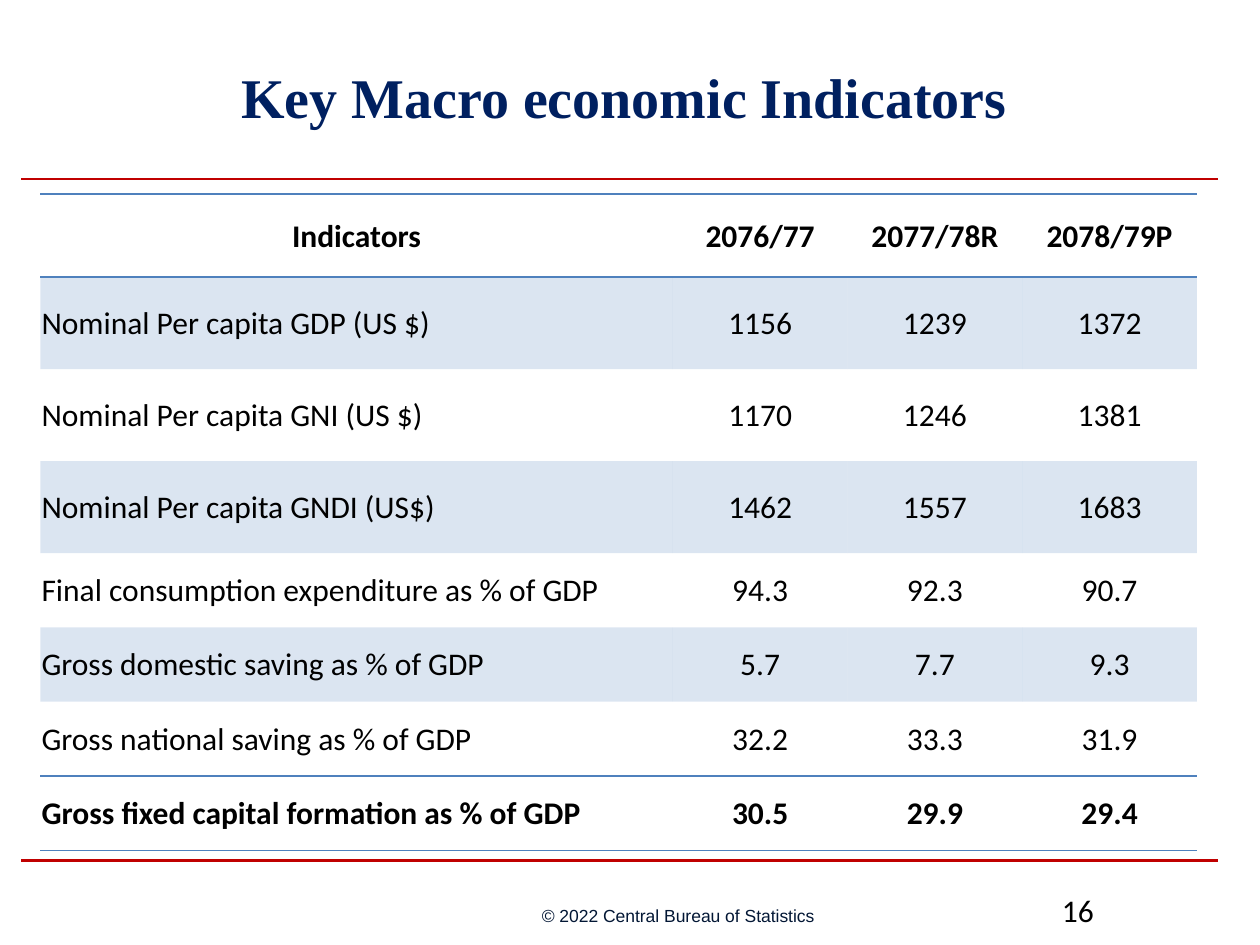
from dataclasses import dataclass
from typing import NamedTuple

from lxml.etree import SubElement
from pptx import Presentation
from pptx.dml.color import RGBColor
from pptx.enum.shapes import MSO_CONNECTOR as Connector
from pptx.enum.text import MSO_ANCHOR as Anchor, PP_ALIGN as Align
from pptx.oxml.ns import qn
from pptx.util import Inches, Pt


@dataclass(frozen=True)
class Theme:
    title: str = "002060"
    rule: str = "C00000"
    accent: str = "4F81BD"
    body: str = "000000"
    copyright: str = "031735"
    band_opacity: int = 20
    title_size: int = 32
    body_size: int = 18
    copyright_size: int = 10
    title_font: str = "Times New Roman"
    body_font: str = "Calibri"
    copyright_font: str = "Arial"


class Indicator(NamedTuple):
    label: str
    values: tuple[str, str, str]
    height: float
    bold: bool = False
    ruled: bool = False
    banded: bool = False


THEME = Theme()
NO_STYLE = "{2D5ABB26-0587-4C30-8999-92F81FD0307C}"
TABLE_LEFT, TABLE_TOP, TABLE_WIDTH = 0.32, 1.54, 9.18
LABEL_WIDTH = 5.02
TALL, SHORT = 0.73, 0.59

INDICATORS = [
    Indicator("Indicators", ("2076/77", "2077/78R", "2078/79P"), 0.66, bold=True, ruled=True),
    Indicator("Nominal Per capita GDP (US $)", ("1156", "1239", "1372"), TALL, banded=True),
    Indicator("Nominal Per capita GNI (US $)", ("1170", "1246", "1381"), TALL),
    Indicator("Nominal Per capita GNDI (US$)", ("1462", "1557", "1683"), TALL, banded=True),
    Indicator("Final consumption expenditure as % of GDP", ("94.3", "92.3", "90.7"), SHORT),
    Indicator("Gross domestic saving as % of GDP", ("5.7", "7.7", "9.3"), SHORT, banded=True),
    Indicator("Gross national saving as % of GDP", ("32.2", "33.3", "31.9"), SHORT),
    Indicator("Gross fixed capital formation as % of GDP", ("30.5", "29.9", "29.4"), SHORT,
              bold=True, ruled=True),
]


def write(frame, text: str, *, size: int = THEME.body_size, font: str = THEME.body_font,
          color: str = THEME.body, bold: bool = False, align=Align.LEFT) -> None:
    paragraph = frame.paragraphs[0]
    paragraph.alignment = align
    run = paragraph.add_run()
    run.text = text
    run.font.size = Pt(size)
    run.font.name = font
    run.font.bold = bold
    run.font.color.rgb = RGBColor.from_string(color)


def add_text(slide, text: str, left: float, top: float, width: float, height: float, *,
             anchor=Anchor.MIDDLE, inset: bool = True, **text_format) -> None:
    box = slide.shapes.add_textbox(Inches(left), Inches(top), Inches(width), Inches(height))
    frame = box.text_frame
    frame.word_wrap = True
    frame.vertical_anchor = anchor
    if not inset:
        frame.margin_left = frame.margin_right = frame.margin_top = frame.margin_bottom = 0
    write(frame, text, **text_format)


def add_rule(slide, y: float) -> None:
    rule = slide.shapes.add_connector(
        Connector.STRAIGHT, Inches(0.17), Inches(y), Inches(9.67), Inches(y))
    rule.line.color.rgb = RGBColor.from_string(THEME.rule)
    rule.line.width = Pt(1.5)
    SubElement(rule._element.spPr, qn("a:effectLst"))


def add_border(cell, side: str) -> None:
    border = SubElement(cell._tc.get_or_add_tcPr(), qn(f"a:{side}"), w=str(Pt(1)))
    fill = SubElement(border, qn("a:solidFill"))
    SubElement(fill, qn("a:srgbClr"), val=THEME.accent)


def style_cell(cell, indicator: Indicator) -> None:
    cell.vertical_anchor = Anchor.MIDDLE
    cell.margin_left = cell.margin_right = cell.margin_top = Inches(0.01)
    cell.margin_bottom = 0
    if indicator.ruled:
        add_border(cell, "lnT")
        add_border(cell, "lnB")
    if indicator.banded:
        cell.fill.solid()
        cell.fill.fore_color.rgb = RGBColor.from_string(THEME.accent)
        color = cell._tc.tcPr.find(qn("a:solidFill")).find(qn("a:srgbClr"))
        SubElement(color, qn("a:alpha"), val=str(THEME.band_opacity * 1000))
    else:
        cell.fill.background()


def add_indicator_table(slide, indicators: list[Indicator]) -> None:
    value_count = len(indicators[0].values)
    height = sum(indicator.height for indicator in indicators)
    table = slide.shapes.add_table(
        len(indicators), value_count + 1, Inches(TABLE_LEFT), Inches(TABLE_TOP),
        Inches(TABLE_WIDTH), Inches(height)).table
    table.first_row = table.horz_banding = False
    table._tbl.tblPr.find(qn("a:tableStyleId")).text = NO_STYLE

    value_width = (TABLE_WIDTH - LABEL_WIDTH) / value_count
    for column, width in zip(table.columns, [LABEL_WIDTH] + [value_width] * value_count):
        column.width = Inches(width)

    for row_index, (row, indicator) in enumerate(zip(table.rows, indicators)):
        row.height = Inches(indicator.height)
        for column_index, text in enumerate((indicator.label, *indicator.values)):
            cell = row.cells[column_index]
            style_cell(cell, indicator)
            is_label = column_index == 0 and row_index > 0
            write(cell.text_frame, text, bold=indicator.bold,
                  align=Align.LEFT if is_label else Align.CENTER)


def main() -> None:
    presentation = Presentation()
    presentation.slide_width, presentation.slide_height = Inches(10), Inches(7.5)
    slide = presentation.slides.add_slide(presentation.slide_layouts[6])

    # Rules and copyright line
    for y in (1.42, 6.83):
        add_rule(slide, y)
    add_text(slide, "© 2022 Central Bureau of Statistics", 4.3, 7.17, 2.2, 0.19, inset=False,
             size=THEME.copyright_size, font=THEME.copyright_font, color=THEME.copyright)

    # Title
    add_text(slide, "Key Macro economic Indicators", 0.08, 0.25, 9.75, 1.03, bold=True,
             size=THEME.title_size, font=THEME.title_font, color=THEME.title,
             align=Align.CENTER)

    # Indicators
    add_indicator_table(slide, INDICATORS)

    # Slide number
    add_text(slide, "16", 8.33, 7.02, 1.33, 0.23, anchor=Anchor.TOP)

    presentation.save("out.pptx")


if __name__ == "__main__":
    main()
